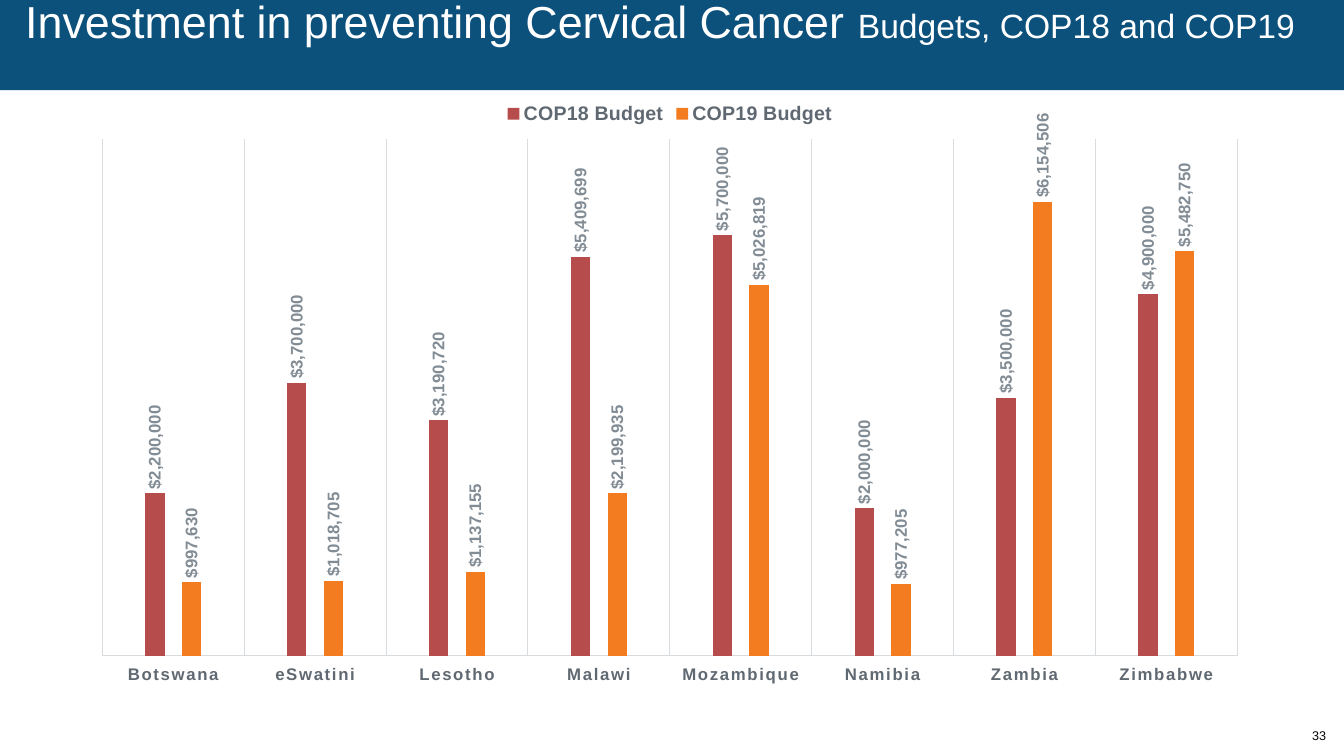
from dataclasses import dataclass

from lxml import etree
from pptx import Presentation
from pptx.chart.chart import Chart
from pptx.chart.data import CategoryChartData
from pptx.dml.color import RGBColor
from pptx.enum.chart import (XL_CHART_TYPE, XL_LABEL_POSITION,
                             XL_LEGEND_POSITION, XL_TICK_LABEL_POSITION,
                             XL_TICK_MARK)
from pptx.enum.shapes import MSO_SHAPE
from pptx.enum.text import MSO_ANCHOR, PP_ALIGN
from pptx.oxml.ns import qn
from pptx.util import Emu, Pt

COLUMNS = XL_CHART_TYPE.COLUMN_CLUSTERED
OUTSIDE_END = XL_LABEL_POSITION.OUTSIDE_END
LEGEND_TOP = XL_LEGEND_POSITION.TOP
LABELS_LOW = XL_TICK_LABEL_POSITION.LOW
NO_TICK = XL_TICK_MARK.NONE
RECTANGLE = MSO_SHAPE.RECTANGLE
MIDDLE, TOP = MSO_ANCHOR.MIDDLE, MSO_ANCHOR.TOP
LEFT, RIGHT = PP_ALIGN.LEFT, PP_ALIGN.RIGHT

EMU_PER_PX = 9525
FONT = "Arial"
NAVY, WHITE, INK = "0C507C", "FFFFFF", "060606"
AXIS_TEXT, LABEL_TEXT, GRID = "606972", "828C95", "D9DCDF"
DOLLARS = '"$"#,##0'
COUNTRIES = ["Botswana", "eSwatini", "Lesotho", "Malawi",
             "Mozambique", "Namibia", "Zambia", "Zimbabwe"]


@dataclass(frozen=True)
class Box:
    left: int
    top: int
    width: int
    height: int

    def emu(self) -> list[Emu]:
        return [px(n) for n in (self.left, self.top, self.width, self.height)]


@dataclass(frozen=True)
class TextRun:
    text: str
    size: int
    color: str


@dataclass(frozen=True)
class Budget:
    name: str
    color: str
    values: tuple[int, ...]


BUDGETS = [
    Budget("COP18 Budget", "B64C4B", (2200000, 3700000, 3190720, 5409699,
                                      5700000, 2000000, 3500000, 4900000)),
    Budget("COP19 Budget", "F47C20", (997630, 1018705, 1137155, 2199935,
                                      5026819, 977205, 6154506, 5482750)),
]


def px(n: int) -> Emu:
    return Emu(n * EMU_PER_PX)


def rgb(color: str) -> RGBColor:
    return RGBColor.from_string(color)


def style_font(font, size: int, color: str, bold: bool = False) -> None:
    font.name = FONT
    font.size = Pt(size)
    font.bold = bold
    font.color.rgb = rgb(color)


def add_text(s, box: Box, runs: list[TextRun], align, anchor) -> None:
    tf = s.shapes.add_textbox(*box.emu()).text_frame
    tf.word_wrap = True
    tf.vertical_anchor = anchor
    tf.margin_left = tf.margin_right = tf.margin_top = tf.margin_bottom = 0
    p = tf.paragraphs[0]
    p.alignment = align
    p.line_spacing = 0.9
    for run in runs:
        r = p.add_run()
        r.text = run.text
        style_font(r.font, run.size, run.color)


def set_plot_layout(chart: Chart, **fractions: float) -> None:
    """Fix the inner plot area as fractions (x, y, w, h) of the chart."""
    plot_area = chart.plots[0]._element.getparent()
    for old in plot_area.findall(qn("c:layout")):
        plot_area.remove(old)
    layout = etree.Element(qn("c:layout"))
    manual = etree.SubElement(layout, qn("c:manualLayout"))
    settings = {"layoutTarget": "inner", "xMode": "edge", "yMode": "edge"}
    for tag, value in (settings | fractions).items():
        etree.SubElement(manual, qn(f"c:{tag}")).set("val", str(value))
    plot_area.insert(0, layout)


def style_axes(chart: Chart) -> None:
    countries, dollars = chart.category_axis, chart.value_axis
    countries.major_tick_mark = countries.minor_tick_mark = NO_TICK
    countries.tick_label_position = LABELS_LOW
    countries.has_major_gridlines = True
    for line in (countries.format.line, countries.major_gridlines.format.line):
        line.color.rgb = rgb(GRID)
        line.width = Pt(0.75)
    font = countries.tick_labels.font
    style_font(font, 12, AXIS_TEXT, bold=True)
    font._element.set("spc", "120")
    dollars.minimum_scale, dollars.maximum_scale = 0, 7000000
    dollars.has_major_gridlines = False
    dollars.tick_labels.number_format = DOLLARS
    dollars.tick_labels.number_format_is_linked = False
    dollars.visible = False


def style_series(series, budget: Budget) -> None:
    series.format.fill.solid()
    series.format.fill.fore_color.rgb = rgb(budget.color)
    series.invert_if_negative = False
    labels = series.data_labels
    labels.show_value = True
    labels.position = OUTSIDE_END
    labels.number_format = DOLLARS
    labels.number_format_is_linked = False
    style_font(labels.font, 12, LABEL_TEXT, bold=True)
    body = labels._element.find(qn("c:txPr")).find(qn("a:bodyPr"))
    body.set("rot", "-5400000")
    body.set("vert", "horz")


def add_budget_chart(s, box: Box) -> None:
    data = CategoryChartData(number_format=DOLLARS)
    data.categories = COUNTRIES
    for budget in BUDGETS:
        data.add_series(budget.name, budget.values)
    chart = s.shapes.add_chart(COLUMNS, *box.emu(), data).chart
    style_font(chart.font, 10, "16181A")
    chart.has_title = False
    chart.has_legend = True
    chart.legend.position = LEGEND_TOP
    chart.legend.include_in_layout = False
    style_font(chart.legend.font, 14, AXIS_TEXT, bold=True)
    plot = chart.plots[0]
    plot.gap_width, plot.overlap = 444, -90
    plot.vary_by_categories = False
    for series, budget in zip(plot.series, BUDGETS):
        style_series(series, budget)
    style_axes(chart)
    set_plot_layout(chart, x=0.02, y=0.08, w=0.96, h=0.86)


def add_band(s, box: Box) -> None:
    sp = s.shapes.add_shape(RECTANGLE, *box.emu())
    sp.shadow.inherit = False
    sp.fill.solid()
    sp.fill.fore_color.rgb = rgb(NAVY)
    sp.line.fill.background()


def main() -> None:
    prs = Presentation()
    prs.slide_width, prs.slide_height = px(1280), px(720)
    s = prs.slides.add_slide(prs.slide_layouts[6])
    add_band(s, Box(0, 0, 1280, 86))
    add_text(s, Box(1211, 682, 52, 38), [TextRun("33", 9, INK)], RIGHT, MIDDLE)
    title = [TextRun("Investment in preventing Cervical Cancer ", 32, WHITE),
             TextRun("Budgets, COP18 and COP19", 24, WHITE)]
    add_text(s, Box(24, 0, 1228, 46), title, LEFT, TOP)
    add_budget_chart(s, Box(75, 87, 1126, 572))
    prs.save("out.pptx")


if __name__ == "__main__":
    main()
